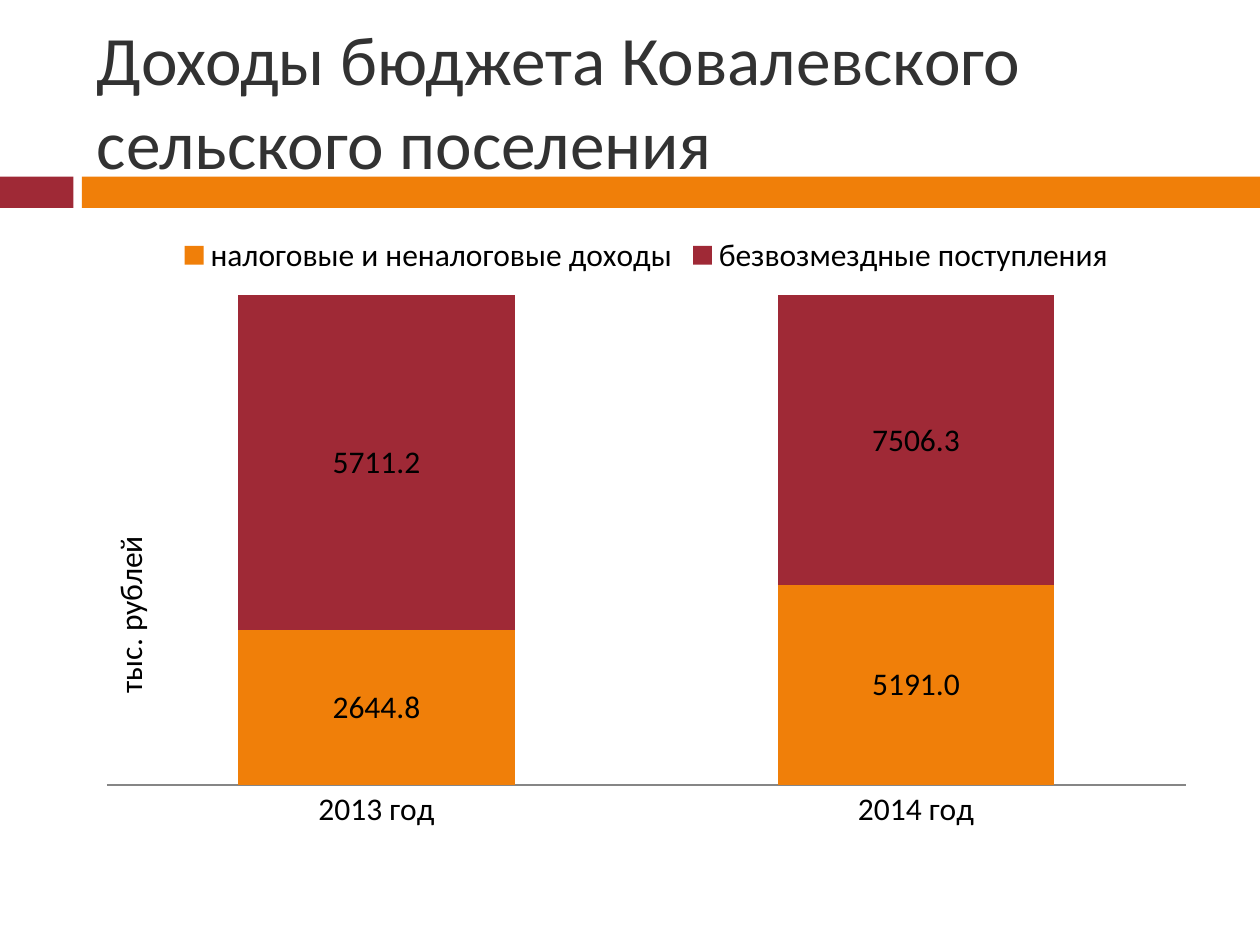
import pptx
import pptx.chart.data
import pptx.dml.color
import pptx.enum.chart
import pptx.enum.shapes
import pptx.enum.text
import pptx.oxml
import pptx.oxml.ns
import pptx.util
from pptx.util import Cm, Pt

HEADING = "Доходы бюджета Ковалевского сельского поселения"
UNIT = "тыс. рублей"
YEARS = ["2013 год", "2014 год"]
INCOME = [
    ("налоговые и неналоговые доходы", [2644.8, 5191.0], "orange"),
    ("безвозмездные поступления", [5711.2, 7506.3], "red"),
]
COLORS = {"orange": "F07F09", "red": "9F2936", "title": "323232",
          "text": "000000", "axis": "868686"}
BANDS = [(0, 1.48, "red"), (1.65, 23.75, "orange")]
PLOT = {"x": 0.02, "y": 0.12, "w": 0.96, "h": 0.79}
FONT = "Calibri"
LEFT, WIDTH = Cm(1.7), Cm(22.66)


def color(key):
    """Return the palette colour for a key."""
    return pptx.dml.color.RGBColor.from_string(COLORS[key])


def style(font, size, key):
    """Set the face, size and colour of a font."""
    font.name, font.size = FONT, Pt(size)
    font.color.rgb = color(key)


def add_bands(slide):
    """Draw the two-colour strip under the title."""
    for left, width, key in BANDS:
        band = slide.shapes.add_shape(
            pptx.enum.shapes.MSO_SHAPE.RECTANGLE, Cm(left), Cm(3.56), Cm(width), Cm(0.63))
        band.shadow.inherit = False
        band.fill.solid()
        band.fill.fore_color.rgb = color(key)
        band.line.fill.background()


def add_heading(slide):
    """Fill and place the title placeholder."""
    heading = slide.shapes.title
    heading.left, heading.top, heading.width, heading.height = LEFT, Cm(0.64), WIDTH, Cm(2.74)
    frame = heading.text_frame
    frame.word_wrap = True
    frame.auto_size = pptx.enum.text.MSO_AUTO_SIZE.NONE
    frame.vertical_anchor = pptx.enum.text.MSO_ANCHOR.MIDDLE
    line = frame.paragraphs[0]
    line.alignment = pptx.enum.text.PP_ALIGN.LEFT
    run = line.add_run()
    run.text = HEADING
    style(run.font, 39.6, "title")


def fix_plot(chart):
    """Pin the inner plot area to its share of the chart."""
    plot_area = chart.plots[0]._element.getparent()
    for old in plot_area.findall(pptx.oxml.ns.qn("c:layout")):
        plot_area.remove(old)
    sizes = "".join(f'<c:{side} val="{share}"/>' for side, share in PLOT.items())
    plot_area.insert(0, pptx.oxml.parse_xml(
        f'<c:layout {pptx.oxml.ns.nsdecls("c")}><c:manualLayout>'
        '<c:layoutTarget val="inner"/><c:xMode val="edge"/><c:yMode val="edge"/>'
        f'{sizes}</c:manualLayout></c:layout>'))


def add_income(slide):
    """Add the stacked income chart."""
    data = pptx.chart.data.CategoryChartData(number_format="0.0")
    data.categories = YEARS
    for name, values, _ in INCOME:
        data.add_series(name, values)
    chart = slide.shapes.add_chart(
        pptx.enum.chart.XL_CHART_TYPE.COLUMN_STACKED_100,
        LEFT, Cm(4.45), WIDTH, Cm(12.5), data).chart
    style(chart.font, 18, "text")
    chart.has_title = False
    chart.has_legend = True
    chart.legend.position = pptx.enum.chart.XL_LEGEND_POSITION.TOP
    chart.legend.include_in_layout = False

    chart.value_axis.visible = False
    chart.value_axis.has_major_gridlines = False
    years = chart.category_axis
    years.major_tick_mark = pptx.enum.chart.XL_TICK_MARK.NONE
    years.format.line.color.rgb = color("axis")
    years.format.line.width = Pt(0.75)

    columns = chart.plots[0]
    columns.gap_width, columns.overlap = 95, 100
    columns.vary_by_categories = False
    for series, (_, _, key) in zip(columns.series, INCOME):
        series.format.fill.solid()
        series.format.fill.fore_color.rgb = color(key)
        labels = series.data_labels
        labels.show_value = True
        labels.number_format = "0.0"
        labels.number_format_is_linked = False
        style(labels.font, 18, "text")
    fix_plot(chart)


def add_unit(slide):
    """Add the rotated unit caption."""
    unit = slide.shapes.add_textbox(Cm(0.76), Cm(11.86), Cm(3.71), Cm(1.02))
    unit.rotation = 270
    unit.text_frame.word_wrap = False
    unit.text_frame.auto_size = pptx.enum.text.MSO_AUTO_SIZE.SHAPE_TO_FIT_TEXT
    run = unit.text_frame.paragraphs[0].add_run()
    run.text = UNIT
    style(run.font, 18, "text")


def main():
    """Build and save the slide."""
    deck = pptx.Presentation()
    deck.slide_width, deck.slide_height = Cm(25.4), Cm(19.05)
    slide = deck.slides.add_slide(deck.slide_layouts[5])
    add_bands(slide)
    add_heading(slide)
    add_income(slide)
    add_unit(slide)
    deck.save("out.pptx")


if __name__ == "__main__":
    main()
